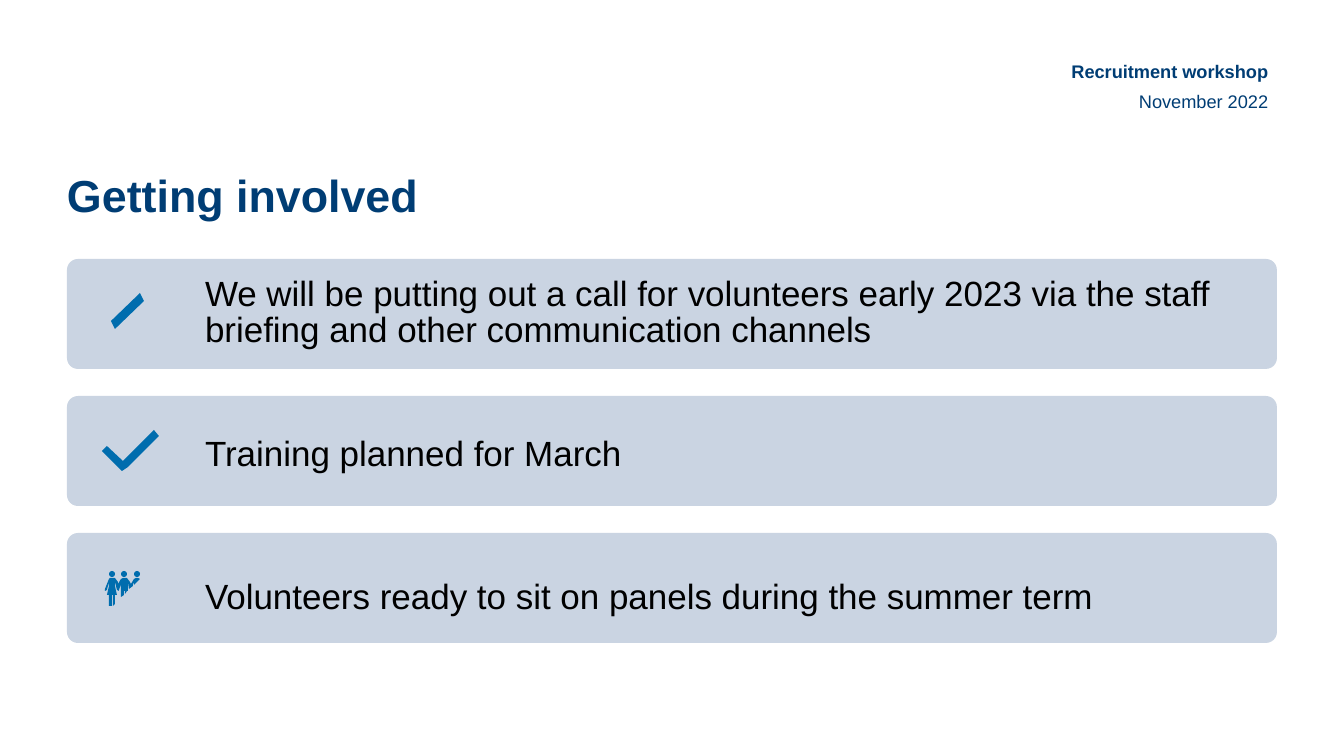
from lxml import etree
from pptx import Presentation
from pptx.dml.color import RGBColor
from pptx.enum.shapes import MSO_SHAPE
from pptx.enum.text import MSO_ANCHOR, MSO_AUTO_SIZE, PP_ALIGN
from pptx.oxml.ns import qn
from pptx.util import Pt

PX = 914400 / 100.8
LEFT, RIGHT = PP_ALIGN.LEFT, PP_ALIGN.RIGHT
TOP, FIXED = MSO_ANCHOR.TOP, MSO_AUTO_SIZE.NONE
CARD, HEAD = MSO_SHAPE.ROUNDED_RECTANGLE, MSO_SHAPE.OVAL
NAVY, BLUE, PALE, BLACK = "003D74", "006DAE", "CAD4E2", "000000"


def paint(shape, color):
    shape.shadow.inherit = False
    shape.fill.solid()
    shape.fill.fore_color.rgb = RGBColor.from_string(color)
    shape.line.fill.background()


def write(paragraph, text, size=25, color=BLACK, bold=False, align=LEFT, before=0, line=1.0):
    props = paragraph._p.get_or_add_pPr()
    props.set("marL", "0")
    props.set("indent", "0")
    etree.SubElement(props, qn("a:buNone"))
    paragraph.alignment = align
    paragraph.space_before = Pt(before)
    paragraph.line_spacing = line
    run = paragraph.add_run()
    run.text = text
    run.font.name = "Arial"
    run.font.size = Pt(size)
    run.font.bold = bold
    run.font.color.rgb = RGBColor.from_string(color)


deck = Presentation()
deck.slide_width, deck.slide_height = round(1344 * PX), round(756 * PX)
slide = deck.slides.add_slide(deck.slide_layouts[1])
shapes = slide.shapes
title, steps = shapes.title, slide.placeholders[1]
event = shapes.add_textbox(0, 0, 0, 0)

for holder, box in (
    (event, (1062, 60, 206, 54)),
    (title, (67, 168, 918, 61)),
    (steps, (205, 277, 1015, 341)),
):
    holder.left, holder.top, holder.width, holder.height = [round(n * PX) for n in box]
    frame = holder.text_frame
    frame.margin_left = frame.margin_top = frame.margin_right = frame.margin_bottom = 0
    frame.vertical_anchor = TOP
    frame.auto_size = FIXED
    frame.word_wrap = True

event_lines = event.text_frame
write(event_lines.paragraphs[0], "Recruitment workshop", size=13, color=NAVY, bold=True, align=RIGHT)
write(event_lines.add_paragraph(), "November 2022", size=13, color=NAVY, align=RIGHT, before=6)
write(title.text_frame.paragraphs[0], "Getting involved", size=32, color=NAVY, bold=True)

step_lines = steps.text_frame
write(
    step_lines.paragraphs[0],
    "We will be putting out a call for volunteers early 2023 via the staff "
    "briefing and other communication channels",
    line=Pt(25.9),
)
write(step_lines.add_paragraph(), "Training planned for March", before=58.5)
write(step_lines.add_paragraph(), "Volunteers ready to sit on panels during the summer term", before=72)

pencil = [(140, 293), (111, 321), (115, 329), (144, 301)]
tick = [(154, 430), (123, 461), (107, 446), (102, 451), (122, 471), (128, 467), (159, 436)]
people = [
    (140, 579), (138, 578), (136, 578), (134, 579), (131, 584), (130, 582), (127, 578),
    (123, 578), (121, 579), (118, 584), (118, 582), (115, 578), (110, 578), (109, 579),
    (105, 589), (105, 591), (107, 590), (109, 582), (109, 586), (107, 595), (109, 595),
    (109, 606), (112, 606), (112, 595), (113, 595), (113, 606), (115, 604), (115, 595),
    (117, 595), (115, 586), (115, 582), (117, 590), (119, 591), (119, 590), (121, 584),
    (121, 597), (124, 595), (124, 591), (125, 591), (125, 594), (127, 591), (128, 591),
    (128, 582), (129, 589), (133, 586), (133, 584), (134, 582), (134, 585), (137, 582),
]

for row, outline in enumerate((pencil, tick, people)):
    card = shapes.add_shape(CARD, *[round(n * PX) for n in (67, 259 + 137 * row, 1210, 110)])
    card.adjustments[0] = 0.1
    paint(card, PALE)
    builder = shapes.build_freeform(*outline[0], scale=PX)
    builder.add_line_segments(outline[1:], close=True)
    paint(builder.convert_to_shape(), BLUE)

for head_left in (109, 121, 134):
    paint(shapes.add_shape(HEAD, *[round(n * PX) for n in (head_left, 571, 6, 6)]), BLUE)

steps.element.getparent().append(steps.element)
deck.save("out.pptx")
